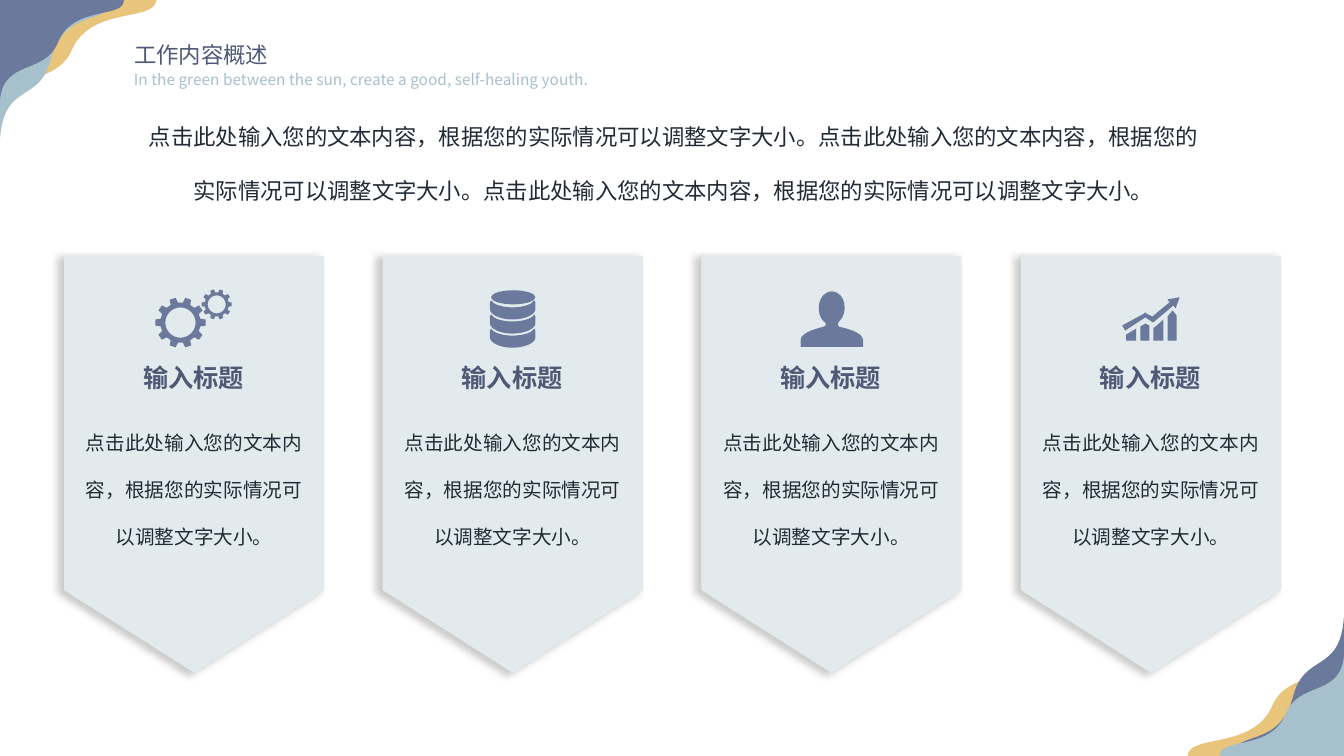
from math import cos, radians, sin

from lxml.etree import SubElement
from pptx import Presentation
from pptx.dml.color import RGBColor
from pptx.enum.shapes import MSO_SHAPE as SHAPE
from pptx.enum.text import MSO_ANCHOR as ANCHOR, MSO_AUTO_SIZE as FIT, PP_ALIGN as ALIGN
from pptx.oxml.ns import qn
from pptx.util import Pt

PX = 9144
W, H = 1333, 750
FONT = "Noto Sans CJK SC"
SLATE, NAVY, SKY, GOLD = "6B799C", "4E5976", "A6C1CC", "E9C57B"
INK, PALE, GREY = "222A35", "E2EAEE", "808080"
SENTENCE = "点击此处输入您的文本内容，根据您的实际情况可以调整文字大小。"

HEADING = {"size": Pt(18), "bold": True}
BODY = {"size": Pt(14)}
INTRO = {"size": Pt(16)}
TITLE = {"size": Pt(16), "bold": False}
SUBTITLE = {"size": Pt(11)}

WAVES = [
    [(72, 48), (56, 88, 6, 67, 0, 116), (0, 0), (155, 0), (154, 22, 92, 6, 72, 48)],
    [(51, 57), (40, 104, 4, 80, 0, 138), (0, 0), (110, 0), (109, 26, 65, 7, 51, 57)],
    [(58, 41), (45, 75, 4, 58, 0, 99), (0, 0), (123, 0), (123, 19, 73, 5, 58, 41)],
]
PERSON = [
    (160, 90), (98, 90), (98, 88, 98, 86, 98, 84), (98, 81, 99, 80, 101, 78),
    (106, 74, 114, 72, 121, 70), (123, 69, 123, 69, 123, 68),
    (123, 66, 123, 66, 121, 65), (113, 58, 114, 36, 129, 35),
    (144, 36, 145, 58, 136, 65), (135, 66, 135, 66, 135, 68),
    (135, 69, 135, 69, 136, 70), (144, 72, 152, 74, 157, 78),
    (159, 80, 160, 81, 160, 84), (160, 86, 160, 88, 160, 90),
]
GROWTH = [
    [(100, 69), (122, 57), (123, 56), (124, 57), (130, 60), (147, 46), (145, 43),
     (157, 41), (153, 52), (151, 49), (132, 65), (131, 66), (129, 65), (123, 61), (103, 74)],
    [(104, 84), (104, 78), (114, 72), (114, 84)],
    [(118, 84), (118, 70), (123, 67), (127, 69), (127, 84)],
    [(131, 84), (131, 71), (132, 71), (141, 63), (141, 84)],
    [(145, 84), (145, 60), (150, 54), (154, 59), (154, 84)],
]


def color(value):
    return RGBColor.from_string(value)


def paint(sp, fill):
    sp.shadow.inherit = False
    sp.fill.solid()
    sp.fill.fore_color.rgb = color(fill)
    sp.line.fill.background()


def bend(sp, parts):
    segments = list(sp._element.iter(qn("a:lnTo")))
    for segment, part in zip(segments, parts):
        if len(part) == 6:
            segment.tag = qn("a:cubicBezTo")
            segment.remove(segment[0])
            for px, py in zip(part[::2], part[1::2]):
                SubElement(segment, qn("a:pt"), x=str(round(px - sp.left)),
                           y=str(round(py - sp.top)))


def add_outline(s, contours, x, y, fill, sign=1):
    placed = [[tuple(((x, y)[i % 2] + sign * v) * PX for i, v in enumerate(part))
               for part in contour] for contour in contours]
    builder = s.shapes.build_freeform(*placed[0][0], scale=1.0)
    for i, contour in enumerate(placed):
        if i:
            builder.move_to(*contour[0])
        builder.add_line_segments([part[-2:] for part in contour[1:]], close=True)
    sp = builder.convert_to_shape()
    bend(sp, [part for contour in placed for part in contour[1:]])
    paint(sp, fill)


def polar(cx, cy, radius, angle):
    return cx + radius * cos(radians(angle)), cy + radius * sin(radians(angle))


def ellipse(cx, cy, rx, ry):
    kx, ky = 0.55 * rx, 0.55 * ry
    return [(cx, cy - ry), (cx + kx, cy - ry, cx + rx, cy - ky, cx + rx, cy),
            (cx + rx, cy + ky, cx + kx, cy + ry, cx, cy + ry),
            (cx - kx, cy + ry, cx - rx, cy + ky, cx - rx, cy),
            (cx - rx, cy - ky, cx - kx, cy - ry, cx, cy - ry)]


def gear(cx, cy, tip, root, hole, teeth=10):
    rim = [polar(cx, cy, radius, 360 / teeth * i + angle)
           for i in range(teeth)
           for radius, angle in ((root, -11), (tip, -7), (tip, 7), (root, 11))]
    return [rim, ellipse(cx, cy, hole, hole)]


def disk(y):
    return [(107, y), (109, y + 4, 118, y + 7, 128, y + 7),
            (139, y + 7, 148, y + 4, 150, y), (150, y + 1, 151, y + 1, 151, y + 2),
            (151, y + 9), (151, y + 14, 141, y + 19, 128, y + 19),
            (116, y + 19, 106, y + 14, 106, y + 9), (106, y + 2),
            (106, y + 1, 106, y + 1, 107, y)]


def write(sp, text, format, fill, align=ALIGN.CENTER, spacing=1.0):
    tf = sp.text_frame
    for name, value in {"word_wrap": True, "auto_size": FIT.NONE,
                        "vertical_anchor": ANCHOR.TOP}.items():
        setattr(tf, name, value)
    p = tf.paragraphs[0]
    p.alignment, p.line_spacing = align, spacing
    r = p.add_run()
    r.text = text
    for name, value in {"name": FONT, **format}.items():
        setattr(r.font, name, value)
    r.font.color.rgb = color(fill)
    SubElement(r.font._element, qn("a:ea"), typeface=FONT)


def add_text(s, box, *args, **kwargs):
    write(s.shapes.add_textbox(*(v * PX for v in box)), *args, **kwargs)


def add_shadow(sp):
    effects = sp._element.spPr.find(qn("a:effectLst"))
    shadow = SubElement(effects, qn("a:outerShdw"), blurRad=str(Pt(5)), sx="101000",
                        sy="101000", algn="tr", rotWithShape="0")
    tint = SubElement(shadow, qn("a:srgbClr"), val=GREY)
    SubElement(tint, qn("a:alpha"), val="40000")


def add_header(s, x, y, w):
    title = s.shapes.title
    for name, value in {"left": x, "top": y, "width": 361, "height": 37}.items():
        setattr(title, name, value * PX)
    write(title, "工作内容概述", TITLE, NAVY, ALIGN.LEFT)
    add_text(s, (x, y + 29, w, 29),
             "In the green between the sun, create a good, self-healing youth.",
             SUBTITLE, SKY, ALIGN.LEFT)


def add_card(s, x, y, w, h, icons):
    sp = s.shapes.add_shape(SHAPE.PENTAGON, (x + (w - h) // 2) * PX,
                            (y + (h - w + 1) // 2) * PX, h * PX, w * PX)
    sp.rotation = 90
    sp.adjustments[0] = 0.318
    paint(sp, PALE)
    add_shadow(sp)
    for icon in icons:
        add_outline(s, icon, x, y, SLATE)
    add_text(s, (x + 51, y + 101, 154, 40), "输入标题", HEADING, NAVY)
    add_text(s, (x + 8, y + 145, 241, 144), SENTENCE, BODY, INK, spacing=2.0)


def add_corner(s, x, y, sign, fills):
    for wave, fill in zip(WAVES, fills):
        add_outline(s, [wave], x, y, fill, sign)


def main():
    prs = Presentation()
    prs.slide_width, prs.slide_height = W * PX, H * PX
    s = prs.slides.add_slide(prs.slide_layouts[5])
    add_header(s, 123, 36, 525)
    add_text(s, (137, 91, 1063, 110), SENTENCE * 3, INTRO, INK, spacing=2.0)
    gears = [gear(115, 66, 25, 20, 15), gear(151, 48, 15, 12, 9)]
    database = [[disk(y) for y in (72, 58, 44)] + [ellipse(129, 41, 22, 7)]]
    for i, icons in enumerate((gears, database, [[PERSON]], [GROWTH])):
        add_card(s, 64 + 949 * i // 3, 254, 258, 413, icons)
    add_corner(s, 0, 0, 1, (GOLD, SKY, SLATE))
    add_corner(s, W, H, -1, (GOLD, SLATE, SKY))
    prs.save("out.pptx")


if __name__ == "__main__":
    main()
